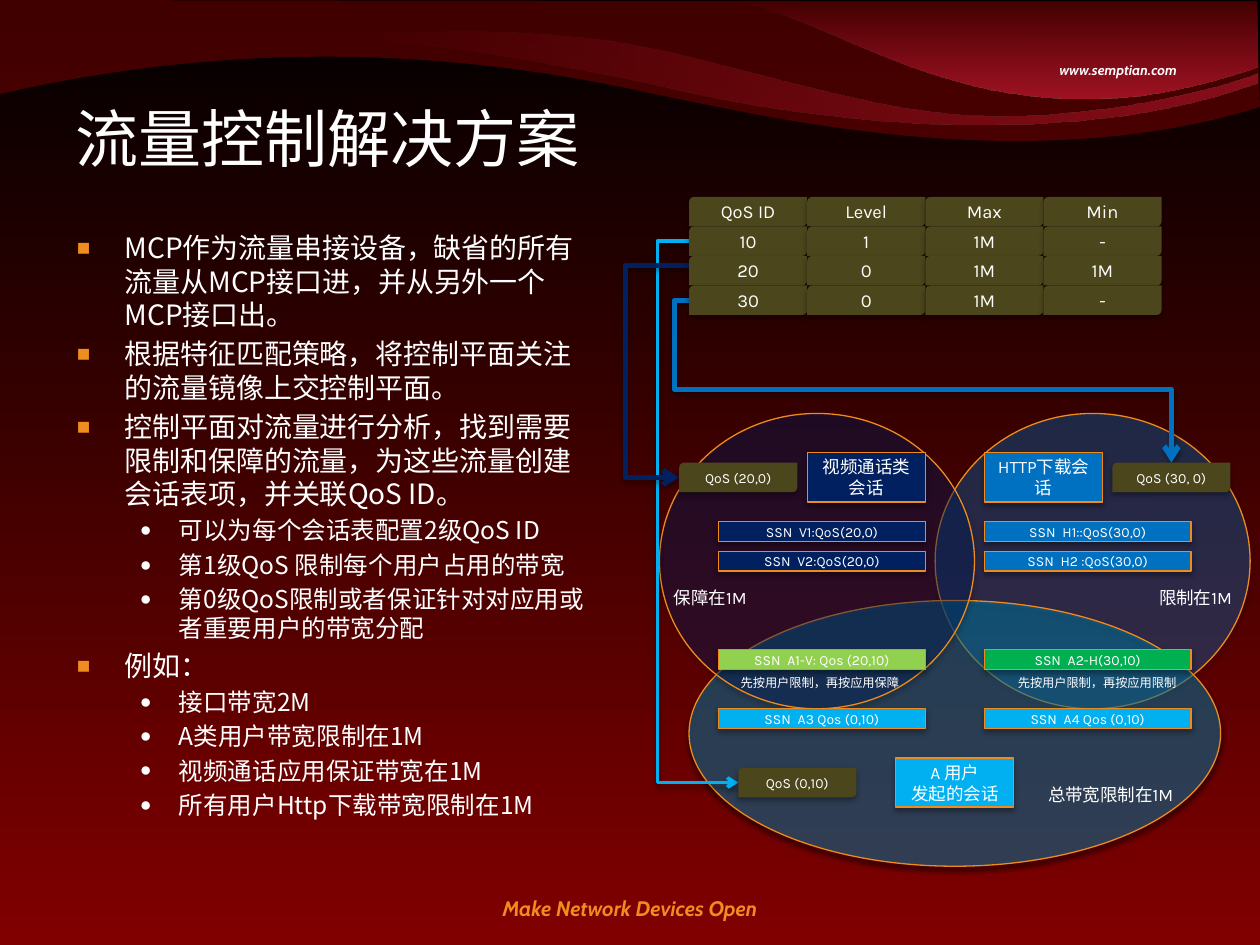
from lxml import etree
from pptx import Presentation
from pptx import util as u
from pptx.dml.color import RGBColor
from pptx.enum import shapes, text
from pptx.oxml import ns, parse_xml

WHITE = RGBColor(0xFF, 0xFF, 0xFF)
BLACK = RGBColor(0x00, 0x00, 0x00)
MAROON = RGBColor(0x80, 0x00, 0x00)
CRIMSON = RGBColor(0xCA, 0x1C, 0x35)
ORANGE = RGBColor(0xEF, 0x8D, 0x21)
OUTLINE = RGBColor(0xEF, 0x8A, 0x1B)
OLIVE = RGBColor(0x4C, 0x46, 0x1D)
NAVY = RGBColor(0x00, 0x20, 0x60)
BLUE = RGBColor(0x00, 0x70, 0xC0)
SKY = RGBColor(0x00, 0xB0, 0xF0)
LIME = RGBColor(0x92, 0xD0, 0x50)
GREEN = RGBColor(0x00, 0xB0, 0x50)

deck = Presentation()
deck.slide_width, deck.slide_height = u.Inches(10), u.Inches(7.5)
page = deck.slides.add_slide(deck.slide_layouts[1])
UNIT = deck.slide_width / 128  # the diagram sits on a grid of 128 columns by 96 rows
PRESET = shapes.MSO_SHAPE
CENTER = text.PP_ALIGN.CENTER


def write(box, words, size, align=None, color=WHITE, **extra):
    box.text_frame.text = words
    values = {"size": u.Pt(size), "name": "Karla", **extra}
    for para in box.text_frame.paragraphs:
        para.alignment = align
        for span in para.runs:
            span.font.color.rgb = color
            for name, value in values.items():
                setattr(span.font, name, value)


def set_opacity(shape, *percents):
    for color, percent in zip(shape.element.spPr.iter(ns.qn("a:srgbClr")), percents):
        etree.SubElement(color, ns.qn("a:alpha"), val=str(percent * 1000))


# Background
fill = page.background.fill
fill.gradient()
fill.gradient_angle = 270
for stop, color in zip(fill.gradient_stops, (BLACK, MAROON)):
    stop.color.rgb = color

# Swooshes in hundredths of an inch: start, Bezier points, colour, gradient angle, opacities
swooshes = [
    ((-1, 75), [(269, 12), (476, 66), (540, 79), (604, 91), (815, 143), (1000, 85),
                (1000, 85), (998, 34), (998, 1), (497, 1), (-1, 0), (-1, 0),
                (-1, 27), (-1, 49), (-1, 75)], MAROON, None, (50,)),
    ((390, 43), [(468, 56), (508, 64), (541, 72), (573, 79), (816, 132), (998, 66),
                 (998, 66), (998, 68), (998, 58), (961, 73), (855, 96), (768, 91),
                 (681, 87), (558, 42), (476, 32), (393, 22), (319, 25), (273, 31),
                 (274, 32), (319, 33), (390, 43)], CRIMSON, 0, (0, 50)),
    ((998, -1), [(998, 26), (998, 53), (998, 53), (788, 127), (678, 18), (577, -1),
                 (577, -1), (788, -1), (998, -1)], CRIMSON, 270, (0, 70)),
]
for start, points, color, angle, opacities in swooshes:
    builder = page.shapes.build_freeform(*start, scale=u.Inches(0.01))
    builder.add_line_segments(points)
    swoosh = builder.convert_to_shape()
    # Every three line points become one curve
    lines = list(swoosh.element.spPr.iter(ns.qn("a:lnTo")))
    for first in range(0, len(points), 3):
        curve = etree.Element(ns.qn("a:cubicBezTo"))
        lines[first].addprevious(curve)
        for line in lines[first:first + 3]:
            curve.append(line[0])
            line.getparent().remove(line)
    swoosh.shadow.inherit = False
    if angle is None:
        swoosh.fill.solid()
        swoosh.fill.fore_color.rgb = color
    else:
        swoosh.fill.gradient()
        swoosh.fill.gradient_angle = angle
        for stop in swoosh.fill.gradient_stops:
            stop.color.rgb = color
    set_opacity(swoosh, *opacities)
    swoosh.line.fill.background()

# Slogan and web address
slogan = page.shapes.add_textbox(0, u.Inches(7.06), deck.slide_width, u.Inches(0.3))
write(slogan, "Make Network Devices Open", 12, CENTER, ORANGE, name="Cabin", bold=True, italic=True)
address = page.shapes.add_textbox(*map(u.Inches, (8.31, 0.44, 1.14, 0.23)))
address.text_frame.word_wrap = False
write(address, "www.semptian.com", 8, name="Cabin", bold=True, italic=True)

# Title and list, in front of the swooshes
title, body = page.placeholders
for box, place in ((title, (0.5, 0.55, 7.58, 1.08)), (body, (0.51, 1.78, 4.25, 4.95))):
    box.left, box.top, box.width, box.height = map(u.Inches, place)
    box.text_frame.auto_size = text.MSO_AUTO_SIZE.NONE
    page.shapes.element.append(box.element)
title.text_frame.vertical_anchor = text.MSO_ANCHOR.MIDDLE
write(title, "流量控制解决方案", 36, text.PP_ALIGN.LEFT)
items = [
    (0, "MCP作为流量串接设备，缺省的所有流量从MCP接口进，并从另外一个MCP接口出。"),
    (0, "根据特征匹配策略，将控制平面关注的流量镜像上交控制平面。"),
    (0, "控制平面对流量进行分析，找到需要限制和保障的流量，为这些流量创建会话表项，并关联QoS ID。"),
    (1, "可以为每个会话表配置2级QoS ID"),
    (1, "第1级QoS 限制每个用户占用的带宽"),
    (1, "第0级QoS限制或者保证针对对应用或者重要用户的带宽分配"),
    (0, "例如："),
    (1, "接口带宽2M"),
    (1, "A类用户带宽限制在1M"),
    (1, "视频通话应用保证带宽在1M"),
    (1, "所有用户Http下载带宽限制在1M"),
]
levels = [(16, 0.38, -0.38, ORANGE, "■"), (14, 0.81, -0.31, WHITE, "●")]
write(body, "\n".join(words for _, words in items), 16, name="Noto Sans CJK SC")
for index, (para, (level, _)) in enumerate(zip(body.text_frame.paragraphs, items)):
    size, margin, indent, color, mark = levels[level]
    props = para._p.get_or_add_pPr()
    props.set("marL", str(u.Inches(margin)))
    props.set("indent", str(u.Inches(indent)))
    bullet_color = etree.SubElement(props, ns.qn("a:buClr"))
    etree.SubElement(bullet_color, ns.qn("a:srgbClr"), val=str(color))
    etree.SubElement(props, ns.qn("a:buSzPct"), val="80000")
    etree.SubElement(props, ns.qn("a:buChar"), char=mark)
    para.level = level
    para.line_spacing = u.Pt(size * 1.2)
    para.space_before = u.Pt(size * 0.2 if index else 0)
    para.runs[0].font.size = u.Pt(size)

# Overlapping session sets: left, top, width, height in grid units
shadowed = []
for *place, color, opacity in ((95, 42, 32, 30, BLUE, 36), (70, 61, 54, 27, SKY, 35),
                               (67, 42, 32, 30, NAVY, 37)):
    circle = page.shapes.add_shape(PRESET.OVAL, *(round(v * UNIT) for v in place))
    circle.fill.solid()
    circle.fill.fore_color.rgb = color
    set_opacity(circle, opacity)
    circle.line.color.rgb, circle.line.width = OUTLINE, u.Pt(0.75)
    shadowed.append(circle)

# Elbow arrows: start and end in grid units, colour, width, bend positions
elbows = [
    (70, 24.5, 75, 79.5, SKY, 2, (-0.64,)),
    (70, 27, 69, 48.5, NAVY, 3, (6.5,)),
    (70, 30.5, 119, 47, BLUE, 3, (-0.03, 0.55)),
]
for *ends, color, width, bends in elbows:
    arrow = page.shapes.add_connector(shapes.MSO_CONNECTOR.ELBOW, *(round(v * UNIT) for v in ends))
    arrow.line.color.rgb, arrow.line.width = color, u.Pt(width)
    etree.SubElement(arrow.line._get_or_add_ln(), ns.qn("a:tailEnd"), type="arrow")
    geometry = arrow.element.spPr.find(ns.qn("a:prstGeom"))
    geometry.set("prst", f"bentConnector{len(bends) + 2}")
    guides = geometry.find(ns.qn("a:avLst"))
    for number, bend in enumerate(bends, 1):
        etree.SubElement(guides, ns.qn("a:gd"), name=f"adj{number}", fmla=f"val {round(bend * 100000)}")
    shadowed.append(arrow)

# QoS cells, QoS tags, set names and sessions: words, left, top, width, height, fill, size
qos_rows = [("QoS ID", "Level", "Max", "Min"), ("10", "1", "1M", "-"),
            ("20", "0", "1M", "1M"), ("30", "0", "1M", "-")]
blocks = [(words, 70 + 12 * column, 20 + 3 * row, 12, 3, OLIVE, 10.5)
          for row, cells in enumerate(qos_rows) for column, words in enumerate(cells)]
tags = [("QoS (20,0)", 69, 47), ("QoS (30, 0)", 113, 47), ("QoS (0,10)", 75, 78)]
blocks += [(*tag, 12, 3, OLIVE, 8) for tag in tags]
names = [("视频通话类会话", 82, 46, NAVY), ("HTTP下载会话", 100, 46, BLUE), ("A 用户\v发起的会话", 91, 77, SKY)]
blocks += [(words, left, top, 12, 5, color, 10) for words, left, top, color in names]
sessions = [
    (53, ("SSN  V1:QoS(20,0)", NAVY), ("SSN  H1::QoS(30,0)", BLUE)),
    (56, ("SSN  V2:QoS(20,0)", NAVY), ("SSN  H2 :QoS(30,0)", BLUE)),
    (66, ("SSN  A1-V: Qos (20,10)", LIME), ("SSN  A2-H(30,10)", GREEN)),
    (72, ("SSN  A3 Qos (0,10)", SKY), ("SSN  A4 Qos (0,10)", SKY)),
]
blocks += [(words, left, top, 21, 2, color, 8) for top, *pair in sessions
           for left, (words, color) in zip((73, 100), pair)]
for words, *place, color, size in blocks:
    preset = PRESET.ROUND_2_DIAG_RECTANGLE if color == OLIVE else PRESET.RECTANGLE
    block = page.shapes.add_shape(preset, *(round(v * UNIT) for v in place))
    block.fill.solid()
    block.fill.fore_color.rgb = color
    if color == OLIVE:
        block.line.fill.background()
    else:
        block.line.color.rgb, block.line.width = OUTLINE, u.Pt(0.75)
    block.text_frame.vertical_anchor = text.MSO_ANCHOR.MIDDLE
    write(block, words, size, CENTER)
    shadowed.append(block)

# Soft shadow under the whole diagram
for shape in shadowed:
    shape.element.spPr.append(parse_xml(
        f'<a:effectLst {ns.nsdecls("a")}><a:outerShdw blurRad="{u.Pt(3.1)}" dist="{u.Pt(1.8)}" '
        'dir="5400000" rotWithShape="0"><a:srgbClr val="000000"><a:alpha val="35000"/>'
        '</a:srgbClr></a:outerShdw></a:effectLst>'))

# Bandwidth notes
notes = [
    ("总带宽限制在1M", 8.22, 6.17, 1.24, 0.27, 10),
    ("保障在1M", 5.25, 4.61, 0.82, 0.27, 10),
    ("限制在1M", 9.1, 4.61, 0.82, 0.27, 10),
    ("先按用户限制，再按应用保障", 5.78, 5.31, 1.48, 0.22, 7),
    ("先按用户限制，再按应用限制", 7.98, 5.31, 1.48, 0.22, 7),
]
for words, *place, size in notes:
    note = page.shapes.add_textbox(*map(u.Inches, place))
    note.text_frame.word_wrap = False
    write(note, words, size)

deck.save("out.pptx")
